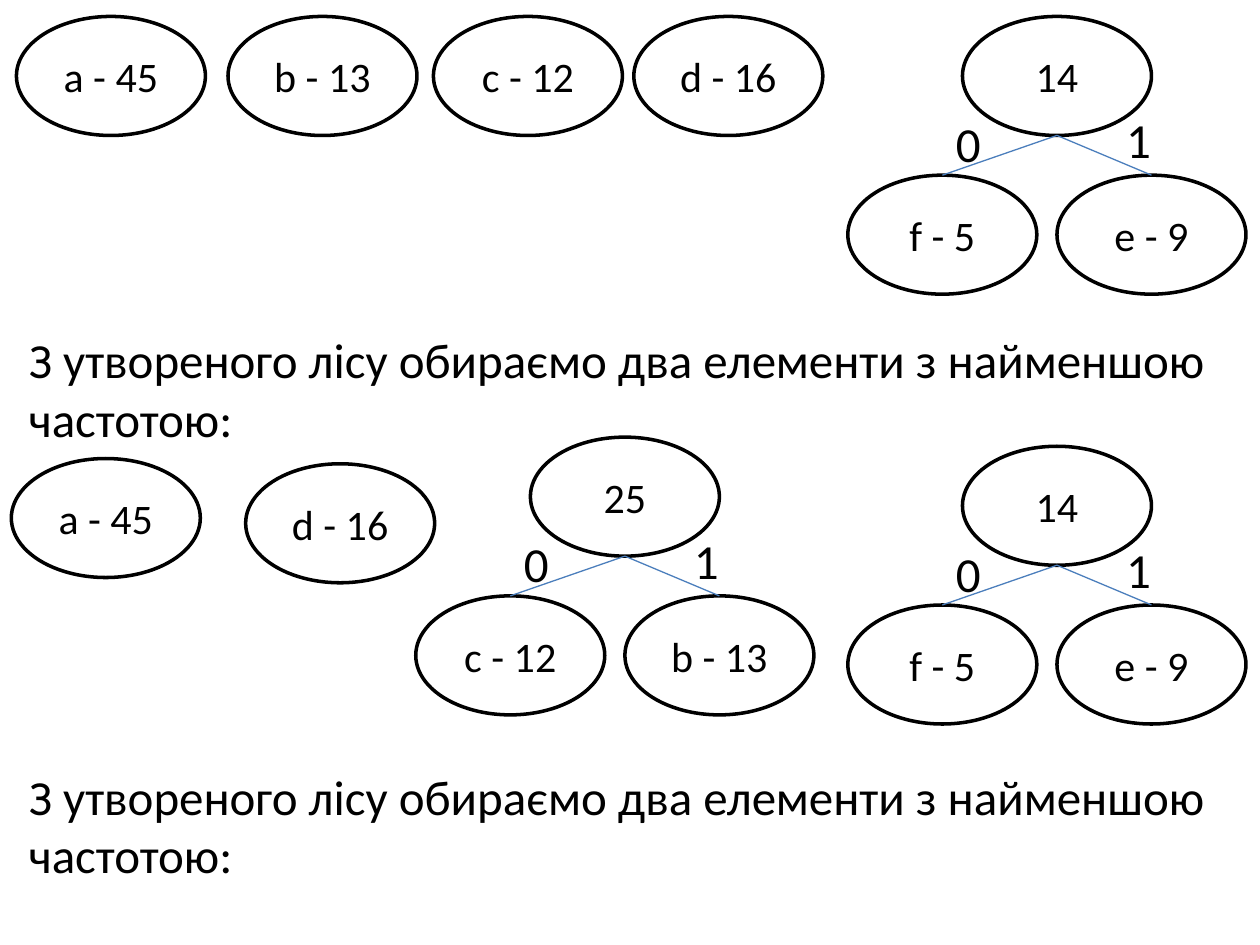
from dataclasses import dataclass

from pptx import Presentation
from pptx.dml.color import RGBColor
from pptx.enum.shapes import MSO_CONNECTOR, MSO_SHAPE
from pptx.enum.text import MSO_ANCHOR, MSO_AUTO_SIZE, PP_ALIGN
from pptx.oxml.ns import qn
from pptx.shapes.shapetree import _BaseGroupShapes as ShapeTree
from pptx.text.text import TextFrame
from pptx.util import Pt
from lxml.etree import SubElement

BLACK, WHITE, BLUE = "000000", "FFFFFF", "4B7EBC"
NODE_WIDTH, NODE_HEIGHT = 108, 68
CHILD_DROP = 90.7
LEFT_SHIFT, RIGHT_SHIFT = -65.5, 54
CAPTION = "З утвореного лісу обираємо два елементи з найменшою частотою:"

NODE_FRAME = {"word_wrap": True, "vertical_anchor": MSO_ANCHOR.MIDDLE}
TEXT_FRAME = {"word_wrap": True, "auto_size": MSO_AUTO_SIZE.SHAPE_TO_FIT_TEXT}


@dataclass(frozen=True)
class Node:
    text: str
    left: float
    top: float


@dataclass(frozen=True)
class Tree:
    root: Node
    zero: str
    one: str


LEAVES = [
    Node("а - 45", 9.4, 9.4),
    Node("b - 13", 130.3, 9.4),
    Node("c - 12", 247.7, 9.4),
    Node("d - 16", 362.2, 9.4),
    Node("а - 45", 6.5, 262),
    Node("d - 16", 140.4, 265),
]
TREES = [
    Tree(Node("14", 550, 9.4), "f - 5", "e - 9"),
    Tree(Node("14", 550, 255), "f - 5", "e - 9"),
    Tree(Node("25", 303.1, 249.8), "c - 12", "b - 13"),
]
CAPTION_TOPS = [185, 434.2]


def color(value: str) -> RGBColor:
    return RGBColor.from_string(value)


def write(frame: TextFrame, text: str, size: float, align: PP_ALIGN, options: dict) -> None:
    for name, value in options.items():
        setattr(frame, name, value)
    para = frame.paragraphs[0]
    para.alignment = align
    span = para.add_run()
    span.text = text
    for name, value in {"name": "Calibri", "size": Pt(size)}.items():
        setattr(span.font, name, value)
    span.font.color.rgb = color(BLACK)


def add_node(shapes: ShapeTree, node: Node) -> None:
    oval = shapes.add_shape(MSO_SHAPE.OVAL, Pt(node.left), Pt(node.top),
                            Pt(NODE_WIDTH), Pt(NODE_HEIGHT))
    oval.shadow.inherit = False
    oval.fill.solid()
    oval.fill.fore_color.rgb = color(WHITE)
    oval.line.color.rgb = color(BLACK)
    oval.line.width = Pt(2)
    write(oval.text_frame, node.text, 24, PP_ALIGN.CENTER, NODE_FRAME)


def add_text(shapes: ShapeTree, text: str, left: float, top: float,
             width: float, height: float) -> None:
    box = shapes.add_textbox(Pt(left), Pt(top), Pt(width), Pt(height))
    write(box.text_frame, text, 28, PP_ALIGN.LEFT, TEXT_FRAME)


def add_branch(shapes: ShapeTree, parent: Node, child: Node) -> None:
    """Join the bottom of the parent to the top of the child."""
    half = NODE_WIDTH / 2
    branch = shapes.add_connector(
        MSO_CONNECTOR.STRAIGHT, Pt(parent.left + half), Pt(parent.top + NODE_HEIGHT),
        Pt(child.left + half), Pt(child.top))
    branch.line.color.rgb = color(BLUE)
    branch.line.width = Pt(0.75)
    SubElement(branch._element.spPr, qn("a:effectLst"))


def add_tree(shapes: ShapeTree, tree: Tree) -> None:
    group = shapes.add_group_shape().shapes
    root = tree.root
    child_top = root.top + CHILD_DROP
    zero = Node(tree.zero, root.left + LEFT_SHIFT, child_top)
    one = Node(tree.one, root.left + RIGHT_SHIFT, child_top)
    for node in (one, zero, root):
        add_node(group, node)
    for child in (zero, one):
        add_branch(group, root, child)
    for digit, shift, drop in (("0", -10.8, 51.8), ("1", 86.4, 49.7)):
        add_text(group, digit, root.left + shift, root.top + drop, 47, 41)


def main() -> None:
    deck = Presentation()
    deck.slide_width, deck.slide_height = Pt(720), Pt(540)
    page = deck.slides.add_slide(deck.slide_layouts[6])
    for leaf in LEAVES:
        add_node(page.shapes, leaf)
    for tree in TREES:
        add_tree(page.shapes, tree)
    for top in CAPTION_TOPS:
        add_text(page.shapes, CAPTION, 9.4, top, 702, 75)
    deck.save("out.pptx")


if __name__ == "__main__":
    main()
